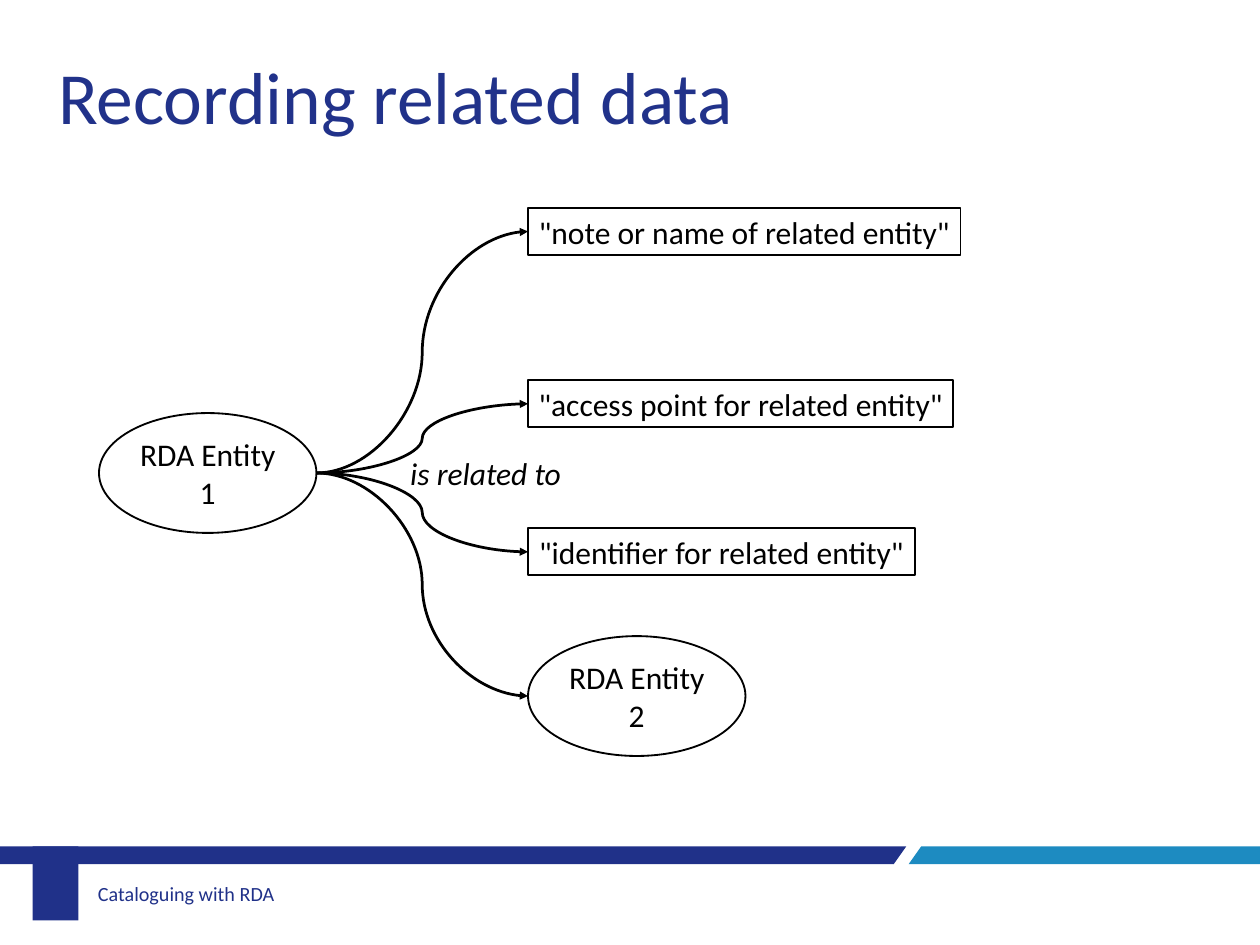
import pptx
import pptx.util
import pptx.dml.color
import pptx.enum.shapes
import pptx.enum.text
import lxml.etree
from pptx.util import Cm, Pt

NAVY = "203189"
TITLE_BLUE = "21328A"
LIGHT_BLUE = "1D8BC1"
BLACK = "000000"
FONT = "Calibri"
BODY_SIZE = 25.7
SLIDE_WIDTH, SLIDE_HEIGHT = 36.27, 27.2
BAND_TOP, BAND_BOTTOM = 24.36, 24.87
TARGET_LEFT = 15.2
ELLIPSE_SITES = {1: 2, 3: 6}
LEFT, RIGHT = 1, 3
SHAPE = pptx.enum.shapes.MSO_SHAPE
ALIGN = pptx.enum.text.PP_ALIGN
ANCHOR = pptx.enum.text.MSO_ANCHOR


def colour(value):
    return pptx.dml.color.RGBColor.from_string(value)


def place(element, left, top, width, height):
    element.left, element.top = Cm(left), Cm(top)
    element.width, element.height = Cm(width), Cm(height)


def write(frame, lines, size, text_colour, align=ALIGN.LEFT, italic=False):
    frame.text = "\n".join(lines)
    frame.word_wrap = False
    frame.auto_size = pptx.enum.text.MSO_AUTO_SIZE.NONE
    frame.vertical_anchor = ANCHOR.MIDDLE
    for paragraph in frame.paragraphs:
        paragraph.alignment = align
        paragraph.font.name = FONT
        paragraph.font.size = Pt(size)
        paragraph.font.italic = italic
        paragraph.font.color.rgb = colour(text_colour)


def add_label(slide, text, box, size, text_colour, italic=False):
    label = slide.shapes.add_textbox(*map(Cm, box))
    write(label.text_frame, [text], size, text_colour, italic=italic)
    return label


def paint(shape, fill):
    shape.shadow.inherit = False
    shape.fill.solid()
    shape.fill.fore_color.rgb = colour(fill)
    shape.line.fill.background()


def add_band(slide, points, fill):
    start, *rest = [(Cm(x), Cm(y)) for x, y in points]
    builder = slide.shapes.build_freeform(*start)
    builder.add_line_segments(rest, close=True)
    paint(builder.convert_to_shape(), fill)


def add_node(slide, kind, lines, left, top, width, height):
    node = slide.shapes.add_shape(kind, Cm(left), Cm(top), Cm(width), Cm(height))
    node.shadow.inherit = False
    node.fill.background()
    node.line.color.rgb = colour(BLACK)
    node.line.width = Pt(1.5)
    write(node.text_frame, lines, BODY_SIZE, BLACK, ALIGN.CENTER)
    return node


def add_entity(slide, number, left, top):
    return add_node(slide, SHAPE.OVAL, ["RDA Entity", number], left, top, 6.26, 3.45)


def add_value(slide, text, top, width):
    return add_node(slide, SHAPE.RECTANGLE, [text], TARGET_LEFT, top, width, 1.35)


def add_relation(slide, source, target):
    curve = pptx.enum.shapes.MSO_CONNECTOR.CURVE
    relation = slide.shapes.add_connector(curve, 0, 0, 0, 0)
    relation.begin_connect(source, RIGHT)
    relation.end_connect(target, LEFT)
    joints = relation._element.nvCxnSpPr.cNvCxnSpPr
    joints.stCxn.idx = ELLIPSE_SITES[RIGHT]
    if target.auto_shape_type == SHAPE.OVAL:
        joints.endCxn.idx = ELLIPSE_SITES[LEFT]
    relation.line.color.rgb = colour(BLACK)
    relation.line.width = Pt(2.25)
    outline = relation.line._get_or_add_ln()
    tail = lxml.etree.SubElement(outline, pptx.oxml.ns.qn("a:tailEnd"))
    tail.set("type", "triangle")
    lxml.etree.SubElement(relation._element.spPr, pptx.oxml.ns.qn("a:effectLst"))


def add_footer(slide):
    add_band(slide, [(0, BAND_TOP), (26.09, BAND_TOP),
                     (25.73, BAND_BOTTOM), (0, BAND_BOTTOM)], NAVY)
    add_band(slide, [(26.52, BAND_TOP), (SLIDE_WIDTH, BAND_TOP),
                     (SLIDE_WIDTH, BAND_BOTTOM), (26.16, BAND_BOTTOM)], LIGHT_BLUE)
    tab = slide.shapes.add_shape(SHAPE.RECTANGLE, Cm(0.94), Cm(BAND_TOP), Cm(1.32), Cm(2.13))
    paint(tab, NAVY)
    course = add_label(slide, "Cataloguing with RDA", (2.64, 25.02, 14.02, 1.4), 16.4, NAVY)
    course.text_frame.margin_left = Cm(0.18)


def main():
    presentation = pptx.Presentation()
    presentation.slide_width = Cm(SLIDE_WIDTH)
    presentation.slide_height = Cm(SLIDE_HEIGHT)
    slide = presentation.slides.add_slide(presentation.slide_layouts[5])

    title = slide.shapes.title
    place(title, 1.42, 1.32, 20.35, 2.82)
    write(title.text_frame, ["Recording related data"], 60, TITLE_BLUE)
    add_footer(slide)

    first_entity = add_entity(slide, "1", 2.85, 11.89)
    targets = [
        add_value(slide, '"note or name of related entity"', 5.99, 12.45),
        add_value(slide, '"access point for related entity"', 10.95, 12.24),
        add_value(slide, '"identifier for related entity"', 15.21, 11.13),
        add_entity(slide, "2", TARGET_LEFT, 18.31),
    ]
    for target in targets:
        add_relation(slide, first_entity, target)
    add_label(slide, "is related to", (11.56, 12.93, 4.9, 1.35), BODY_SIZE, BLACK, italic=True)

    presentation.save("out.pptx")


if __name__ == "__main__":
    main()
